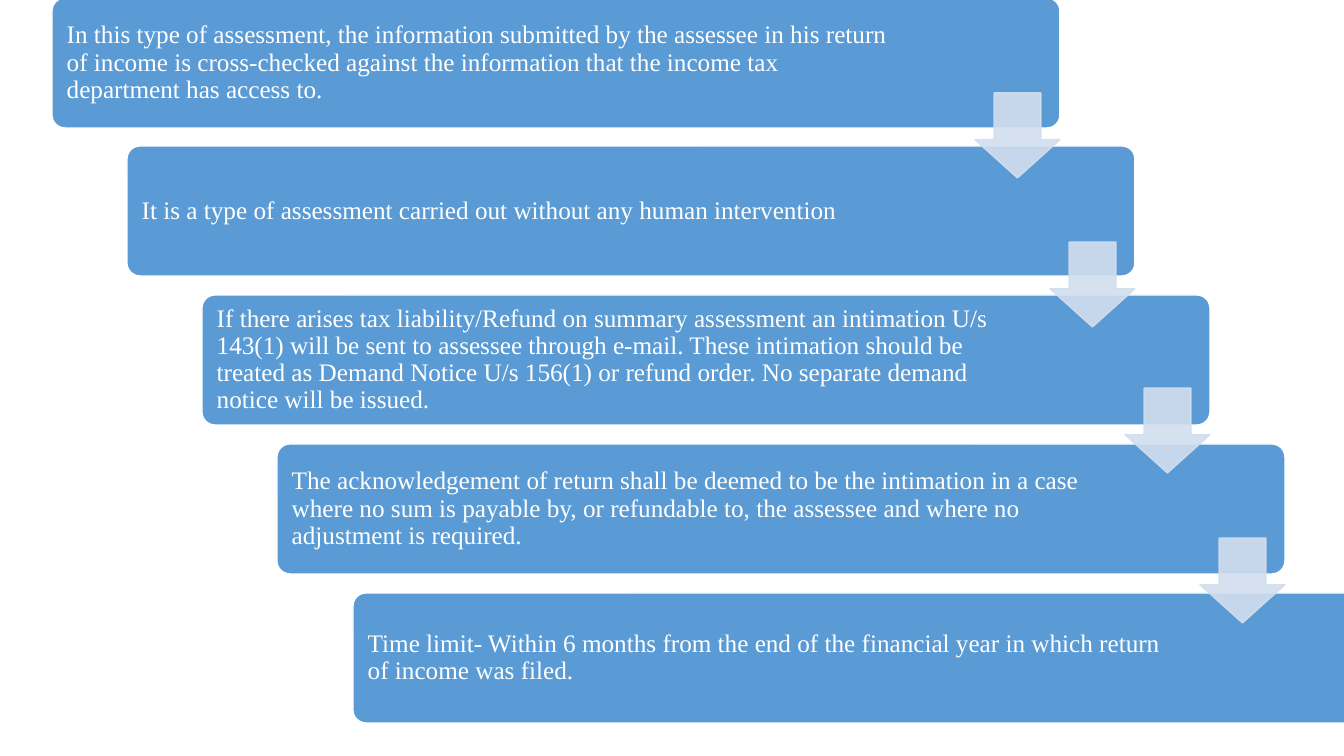
"""Build a slide of five stepped boxes on summary assessment, joined by arrows."""
from lxml.etree import SubElement
from pptx import Presentation
from pptx.dml.color import RGBColor
from pptx.enum.shapes import MSO_SHAPE
from pptx.enum.text import MSO_ANCHOR, PP_ALIGN
from pptx.oxml.ns import qn
from pptx.util import Emu, Pt

HUES = {"box": "5B9BD5", "arrow": "D2DEEF", "white": "FFFFFF"}
STEPS = [
    "In this type of assessment, the information submitted by the assessee in his return of income is cross-checked against the information that the income tax department has access to.",
    "It is a type of assessment carried out without any human intervention",
    "If there arises tax liability/Refund on summary assessment an intimation U/s 143(1) will be sent to assessee through e-mail. These intimation should be treated as Demand Notice U/s 156(1) or refund order. No separate demand notice will be issued.",
    "The acknowledgement of return shall be deemed to be the intimation in a case where no sum is payable by, or refundable to, the assessee and where no adjustment is required.",
    "Time limit- Within 6 months from the end of the financial year in which return of income was filed.",
]
ARROW_TOPS = [93, 242, 388, 538]


def px(count):
    return Emu(count * 914400 * 10 // 1008)


def add_block(kind, left, top, width, height, fill, line):
    block = slide.shapes.add_shape(kind, px(left), px(top), px(width), px(height))
    block.shadow.inherit = False
    block.fill.solid()
    block.fill.fore_color.rgb = RGBColor.from_string(HUES[fill])
    block.line.color.rgb = RGBColor.from_string(HUES[line])
    block.line.width = Pt(1)
    return block


deck = Presentation()
deck.slide_width, deck.slide_height = px(1344), px(756)
slide = deck.slides.add_slide(deck.slide_layouts[6])

for row, words in enumerate(STEPS):
    box = add_block(MSO_SHAPE.ROUNDED_RECTANGLE, 52 + row * 301 // 4,
                    -2 + row * 595 // 4, 1008, 130, "box", "white")
    box.adjustments[0] = 0.1
    frame = box.text_frame
    frame.word_wrap = True
    frame.vertical_anchor = MSO_ANCHOR.MIDDLE
    frame.margin_left = px(11)
    frame.margin_right = px(171 if row else 159)
    frame.margin_top = frame.margin_bottom = px(7)
    frame.text = words
    para = frame.paragraphs[0]
    para.alignment = PP_ALIGN.LEFT
    para.line_spacing = 0.9
    para.font.name = "Times New Roman"
    para.font.size = Pt(18)
    para.font.color.rgb = RGBColor.from_string(HUES["white"])

for row, top in enumerate(ARROW_TOPS):
    arrow = add_block(MSO_SHAPE.DOWN_ARROW, 975 + row * 301 // 4, top, 85, 85,
                      "arrow", "arrow")
    arrow.adjustments[0] = 0.55
    arrow.adjustments[1] = 0.45
    for color in arrow.element.spPr.iter(qn("a:srgbClr")):
        SubElement(color, qn("a:alpha"), val="90000")

deck.save("out.pptx")
